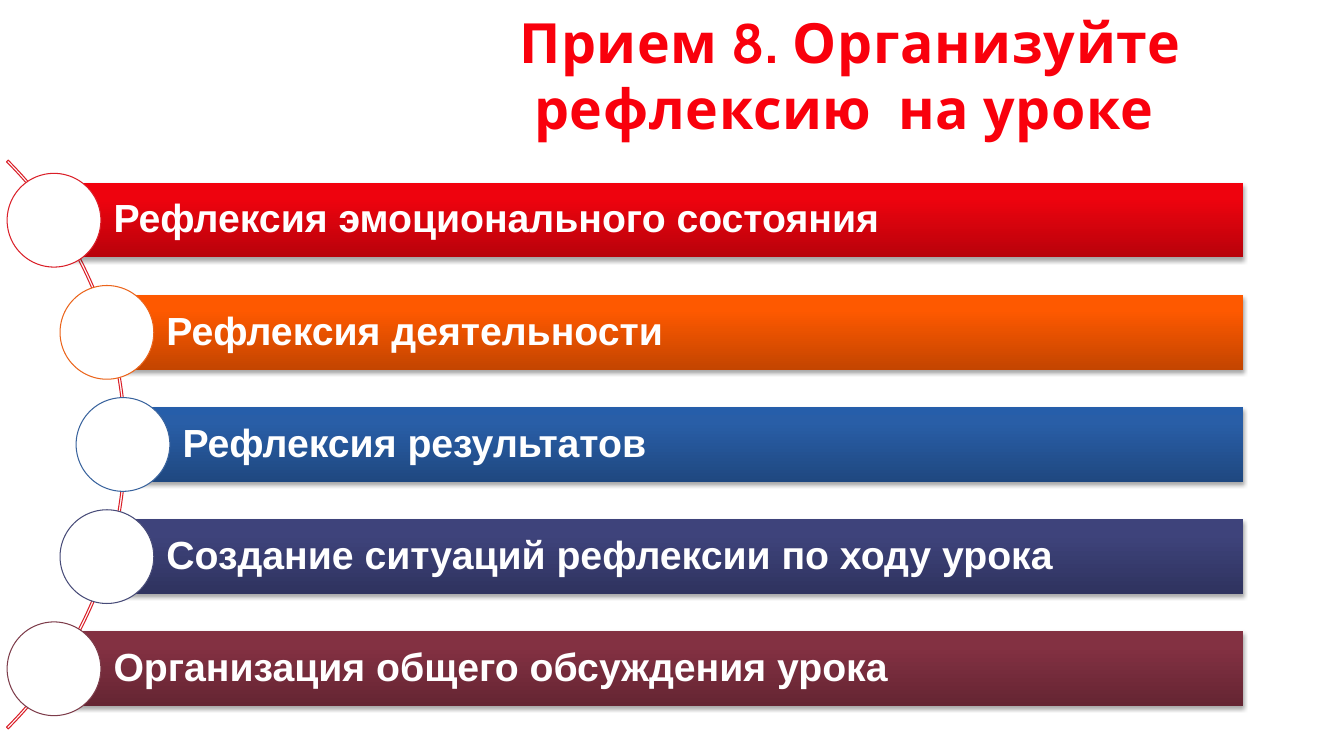
from copy import deepcopy
from dataclasses import dataclass
from math import sqrt

from lxml import etree
from pptx import Presentation
from pptx.dml.color import RGBColor
from pptx.enum.shapes import MSO_SHAPE
from pptx.enum.text import MSO_ANCHOR, MSO_AUTO_SIZE, PP_ALIGN
from pptx.oxml.ns import qn
from pptx.util import Inches, Pt

ARC, BAR, CIRCLE = MSO_SHAPE.BLOCK_ARC, MSO_SHAPE.RECTANGLE, MSO_SHAPE.OVAL
MIDDLE, NO_FIT = MSO_ANCHOR.MIDDLE, MSO_AUTO_SIZE.NONE
LEFT, CENTER = PP_ALIGN.LEFT, PP_ALIGN.CENTER
TITLE_ONLY = 5


@dataclass(frozen=True)
class Theme:
    white: str = "FFFFFF"
    arc: str = "DA1F28"
    shadow: str = "000000"
    title_stops: tuple = ((0.25, "F9000C"), (1, "B00008"))
    title_font: str = "Cabin"
    title_size: float = 39.6
    bar_font: str = "Arial"
    bar_size: float = 28
    line_width: float = 0.75


THEME = Theme()

STEPS = [
    ("Рефлексия эмоционального состояния", "DA1F28", ("B8020B", "EE030E", "F2000C")),
    ("Рефлексия деятельности", "EB641B", ("C44500", "FE5900", "FF5A00")),
    ("Рефлексия результатов", "39639D", ("1F4880", "295EA7", "265EAA")),
    ("Создание ситуаций рефлексии по ходу урока", "474B78", ("2F335F", "3E437B", "3D427D")),
    ("Организация общего обсуждения урока", "7D3C4A", ("652533", "833142", "852F42")),
]


def apply(target, **values):
    for name, value in values.items():
        setattr(target, name, value)


def color(code):
    return RGBColor.from_string(code)


def paint_gradient(fill, holder, stops, angle):
    fill.gradient()
    fill.gradient_angle = angle
    stop_list = next(holder.iter(qn("a:gsLst")))
    for _ in range(len(stops) - len(stop_list)):
        stop_list.append(deepcopy(stop_list[-1]))
    for stop, (position, code) in zip(fill.gradient_stops, stops):
        stop.position = position
        stop.color.rgb = color(code)


def add_soft_shadow(shape):
    shape.shadow.inherit = False
    effects = shape._element.spPr.find(qn("a:effectLst"))
    shadow = etree.SubElement(effects, qn("a:outerShdw"), blurRad=str(Pt(3.1)),
                              dist=str(Pt(1.8)), dir="5400000", rotWithShape="0")
    tint = etree.SubElement(shadow, qn("a:srgbClr"), val=THEME.shadow)
    etree.SubElement(tint, qn("a:alpha"), val="35000")


def add_outlined(page, kind, center_x, center_y, size, line_code):
    shape = page.shapes.add_shape(kind, Inches(center_x - size / 2),
                                  Inches(center_y - size / 2), Inches(size), Inches(size))
    shape.shadow.inherit = False
    shape.line.color.rgb = color(line_code)
    shape.line.width = Pt(THEME.line_width)
    return shape


def add_title(page, left, top, width, height):
    title = page.shapes.title
    apply(title, left=Inches(left), top=Inches(top),
          width=Inches(width), height=Inches(height))
    apply(title.text_frame, vertical_anchor=MIDDLE, word_wrap=True, auto_size=NO_FIT)
    para = title.text_frame.paragraphs[0]
    para.alignment = CENTER
    span = para.add_run()
    span.text = "Прием 8. Организуйте рефлексию  на уроке "
    apply(span.font, name=THEME.title_font, size=Pt(THEME.title_size), bold=True)
    paint_gradient(span.font.fill, span._r, THEME.title_stops, 270)
    span._r.get_or_add_rPr().set("spc", "50")


def add_bar(page, left, top, width, height, text, shades):
    bar = page.shapes.add_shape(BAR, Inches(left), Inches(top),
                                Inches(width), Inches(height))
    paint_gradient(bar.fill, bar._element.spPr, list(zip((0, 0.8, 1), shades)), 90)
    bar.line.fill.background()
    add_soft_shadow(bar)
    pad = Inches(0.08)
    apply(bar.text_frame, vertical_anchor=MIDDLE, word_wrap=True, margin_left=Inches(0.59),
          margin_right=pad, margin_top=pad, margin_bottom=pad)
    para = bar.text_frame.paragraphs[0]
    apply(para, alignment=LEFT, line_spacing=0.9)
    span = para.add_run()
    span.text = text
    apply(span.font, name=THEME.bar_font, size=Pt(THEME.bar_size), bold=True)
    span.font.color.rgb = color(THEME.white)


def add_curved_list(page, left, top, width, height, steps):
    pitch, bar_height, circle_size = 1.1125, 0.74, 0.93
    arc_size, radius = 7.98, 3.96
    middle_y = top + height / 2
    arc_x = left - 2.8
    arc = add_outlined(page, ARC, arc_x, middle_y, arc_size, THEME.arc)
    arc.fill.background()
    for index, value in enumerate((189, 27, 0.003)):
        arc.adjustments[index] = value
    for index, (text, line_code, shades) in enumerate(steps):
        offset = (index - (len(steps) - 1) / 2) * pitch
        x = arc_x + sqrt(radius ** 2 - offset ** 2)
        y = middle_y + offset
        add_bar(page, x, y - bar_height / 2, left + width - x, bar_height, text, shades)
        circle = add_outlined(page, CIRCLE, x, y, circle_size, line_code)
        circle.fill.solid()
        circle.fill.fore_color.rgb = color(THEME.white)


def main():
    deck = Presentation()
    apply(deck, slide_width=Inches(13.33), slide_height=Inches(7.5))
    page = deck.slides.add_slide(deck.slide_layouts[TITLE_ONLY])
    add_title(page, 3.52, 0.02, 9.83, 1.43)
    add_curved_list(page, 0.06, 1.59, 12.27, 5.64, STEPS)
    deck.save("out.pptx")


if __name__ == "__main__":
    main()
